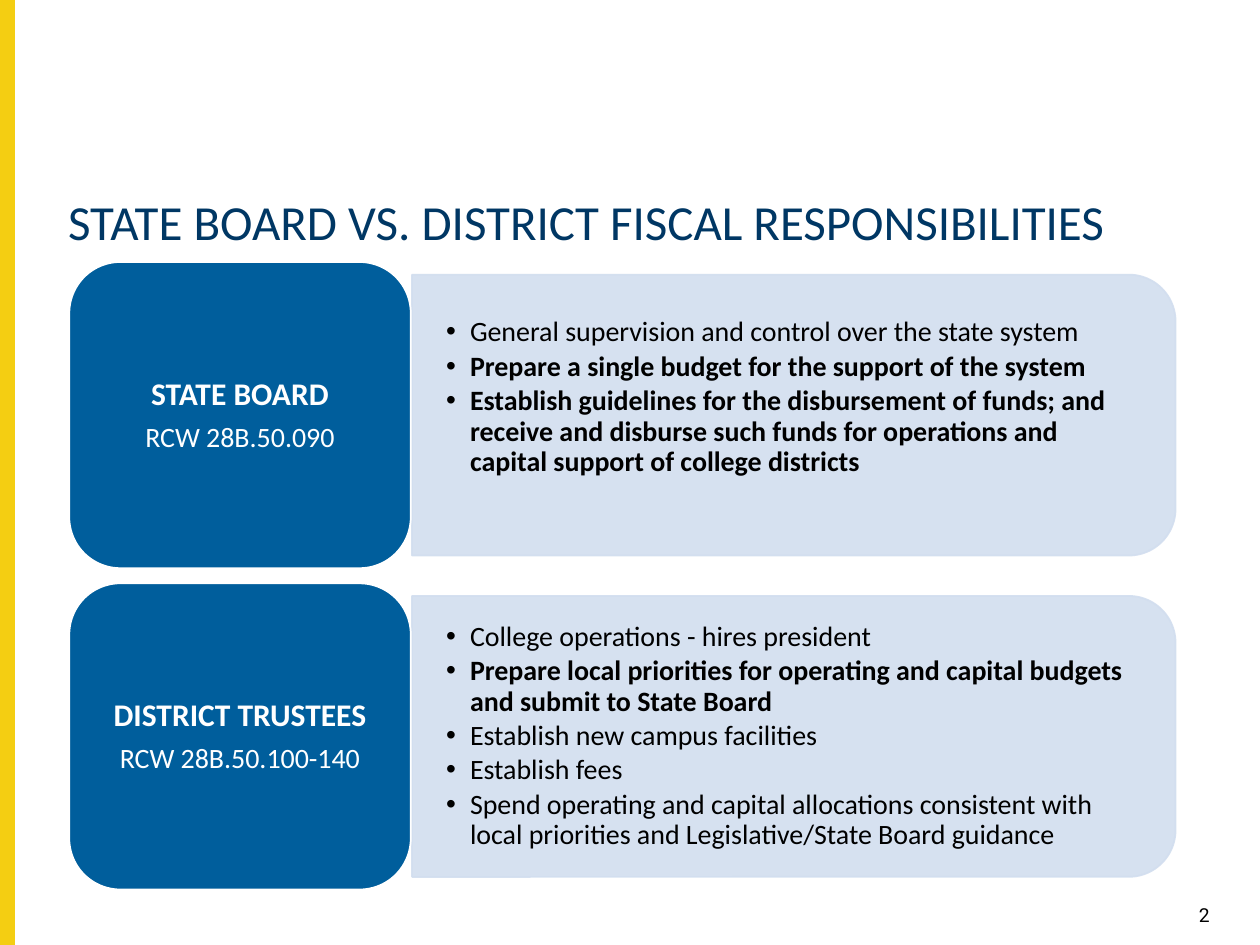
from dataclasses import dataclass

from lxml.etree import SubElement
from pptx import Presentation
from pptx.dml.color import RGBColor
from pptx.enum.shapes import MSO_SHAPE as Preset
from pptx.enum.text import MSO_ANCHOR as Anchor, MSO_AUTO_SIZE as AutoSize, PP_ALIGN as Align
from pptx.oxml.ns import qn
from pptx.util import Inches, Pt

YELLOW = RGBColor(0xF4, 0xCE, 0x12)
NAVY = RGBColor(0x00, 0x37, 0x64)
BLUE = RGBColor(0x00, 0x5E, 0x9C)
PALE_BLUE = RGBColor(0xD2, 0xDE, 0xEF)
WHITE = RGBColor(0xFF, 0xFF, 0xFF)
BLACK = RGBColor(0x00, 0x00, 0x00)

FIRST_TOP, ROW_PITCH = 2.08, 2.55
LABEL_LEFT, LABEL_WIDTH, LABEL_HEIGHT = 0.55, 2.71, 2.43
PANEL_LEFT, PANEL_WIDTH, PANEL_HEIGHT = 3.27, 6.06, 2.23


@dataclass
class Duty:
    text: str
    bold: bool = False


@dataclass
class Authority:
    name: str
    statute: str
    duties: list[Duty]
    bottom_inset: float = 0.14


AUTHORITIES = [
    Authority("STATE BOARD", "RCW 28B.50.090", [
        Duty("General supervision and control over the state system"),
        Duty("Prepare a single budget for the support of the system", True),
        Duty("Establish guidelines for the disbursement of funds; and receive and "
             "disburse such funds for operations and capital support of college districts", True),
    ], bottom_inset=0.42),
    Authority("DISTRICT TRUSTEES", "RCW 28B.50.100-140", [
        Duty("College operations - hires president"),
        Duty("Prepare local priorities for operating and capital budgets "
             "and submit to State Board", True),
        Duty("Establish new campus facilities"),
        Duty("Establish fees"),
        Duty("Spend operating and capital allocations consistent with local priorities "
             "and Legislative/State Board guidance"),
    ]),
]


def place(shape, left: float, top: float, width: float, height: float) -> None:
    shape.left, shape.top = Inches(left), Inches(top)
    shape.width, shape.height = Inches(width), Inches(height)


def add_block(slide, preset, box: tuple, fill: RGBColor, line: RGBColor):
    block = slide.shapes.add_shape(preset, *map(Inches, box))
    block.shadow.inherit = False
    block.fill.solid()
    block.fill.fore_color.rgb = fill
    block.line.color.rgb = line
    block.line.width = Pt(1)
    return block


def set_frame(frame, anchor, side: float, top: float, bottom: float) -> None:
    frame.word_wrap = True
    frame.auto_size = AutoSize.NONE
    frame.vertical_anchor = anchor
    frame.margin_left = frame.margin_right = Inches(side)
    frame.margin_top, frame.margin_bottom = Inches(top), Inches(bottom)


def write(paragraph, text: str, size: float, color: RGBColor, align=Align.LEFT,
          bold: bool = False, after: float = 0, font: str = "Calibri") -> None:
    paragraph.text = text
    paragraph.alignment = align
    paragraph.line_spacing = 0.9
    paragraph.space_before, paragraph.space_after = Pt(0), Pt(after)
    paragraph.font.name, paragraph.font.size = font, Pt(size)
    paragraph.font.bold = bold
    paragraph.font.color.rgb = color


def add_bullet(paragraph) -> None:
    props = paragraph._p.get_or_add_pPr()
    props.set("marL", str(Inches(0.19)))
    props.set("indent", str(Inches(-0.19)))
    SubElement(props, qn("a:buFont"), typeface="Arial")
    SubElement(props, qn("a:buChar"), char="•")


def paragraphs(frame, count: int) -> list:
    return [frame.paragraphs[0]] + [frame.add_paragraph() for _ in range(count - 1)]


def draw_authority(slide, authority: Authority, duty_list, top: float) -> None:
    # Pale panel: an upright shape turned a quarter about its centre
    middle = top + LABEL_HEIGHT / 2
    panel = add_block(slide, Preset.ROUND_2_SAME_RECTANGLE,
                      (PANEL_LEFT + (PANEL_WIDTH - PANEL_HEIGHT) / 2, middle - PANEL_WIDTH / 2,
                       PANEL_HEIGHT, PANEL_WIDTH), PALE_BLUE, PALE_BLUE)
    panel.rotation = 90
    for color in panel.element.spPr.iter(qn("a:srgbClr")):
        SubElement(color, qn("a:alpha"), val="90000")

    # Duties, lifted in front of the panel
    panel.element.addnext(duty_list.element)
    place(duty_list, PANEL_LEFT, middle - 1.005, 5.95, 2.01)
    frame = duty_list.text_frame
    set_frame(frame, Anchor.MIDDLE, 0.27, 0.14, authority.bottom_inset)
    for paragraph, duty in zip(paragraphs(frame, len(authority.duties)), authority.duties):
        paragraph.level = 1
        add_bullet(paragraph)
        write(paragraph, duty.text, 16, BLACK, bold=duty.bold, after=2.4)

    # Label
    add_block(slide, Preset.ROUNDED_RECTANGLE,
              (LABEL_LEFT, top, LABEL_WIDTH, LABEL_HEIGHT), BLUE, WHITE)
    label = slide.shapes.add_textbox(*map(Inches, (LABEL_LEFT + 0.12, top + 0.12, 2.47, 2.2)))
    set_frame(label.text_frame, Anchor.MIDDLE, 0.07, 0.04, 0.04)
    name, statute = paragraphs(label.text_frame, 2)
    write(name, authority.name, 18, WHITE, Align.CENTER, bold=True, after=6.3)
    write(statute, authority.statute, 16, WHITE, Align.CENTER, after=5.6)


def main() -> None:
    deck = Presentation()
    deck.slide_width, deck.slide_height = Inches(10), Inches(7.5)
    slide = deck.slides.add_slide(deck.slide_layouts[3])
    title, *duty_lists = slide.placeholders

    # Side stripe and title
    add_block(slide, Preset.RECTANGLE, (0, 0, 0.11, 7.5), YELLOW, YELLOW)
    place(title, 0.44, 1.52, 9.12, 0.7)
    set_frame(title.text_frame, Anchor.TOP, 0.1, 0.05, 0.05)
    write(title.text_frame.paragraphs[0],
          "STATE BOARD VS. DISTRICT FISCAL RESPONSIBILITIES", 28, NAVY)

    # Page number
    page = slide.shapes.add_textbox(*map(Inches, (9.2, 7.14, 0.5, 0.21)))
    set_frame(page.text_frame, Anchor.TOP, 0.1, 0.05, 0.05)
    write(page.text_frame.paragraphs[0], "2", 11, BLACK, Align.RIGHT, font="Roboto")

    # One row for each authority
    for row, (authority, duty_list) in enumerate(zip(AUTHORITIES, duty_lists)):
        draw_authority(slide, authority, duty_list, FIRST_TOP + row * ROW_PITCH)

    deck.save("out.pptx")


if __name__ == "__main__":
    main()
